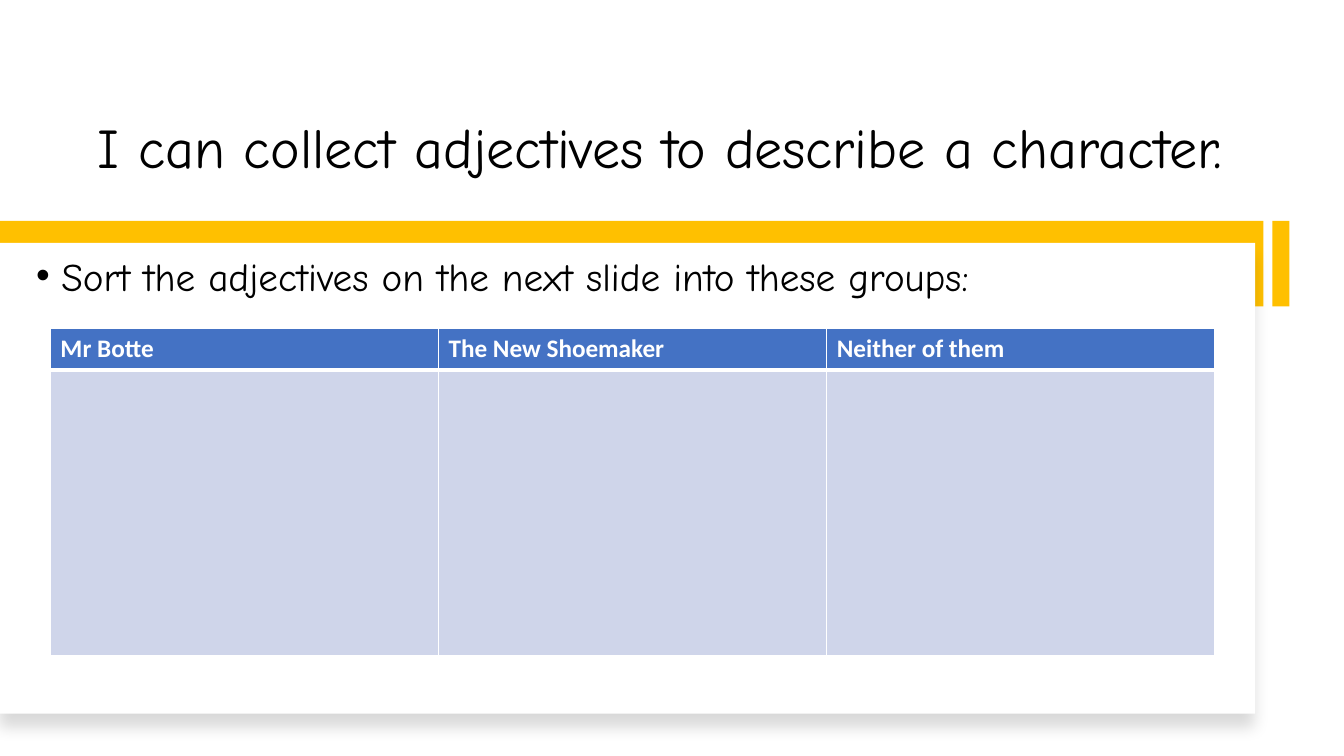
import pptx
import pptx.dml.color
import pptx.enum.shapes
import pptx.enum.text
import pptx.oxml
import pptx.oxml.ns
import pptx.util

PX = 9144  # EMU per px, 100 px to the inch
NAMESPACE = pptx.oxml.ns.nsdecls("a")
WHITE, BLACK, YELLOW = "FFFFFF", "000000", "FFC000"
HEADER_BLUE, BODY_BLUE = "4472C4", "CFD5EA"


def color(value):
    return pptx.dml.color.RGBColor.from_string(value)


def add_text(frame, text, size, font, value, spacing=None):
    paragraph = frame.paragraphs[0]
    paragraph.line_spacing = spacing
    run = paragraph.add_run()
    run.text = text
    run.font.size = pptx.util.Pt(size)
    run.font.name = font
    run.font.color.rgb = color(value)
    return run


presentation = pptx.Presentation()
presentation.slide_width = pptx.util.Inches(13.33)
presentation.slide_height = pptx.util.Inches(7.5)
slide = presentation.slides.add_slide(presentation.slide_layouts[6])

# Title
title = slide.shapes.add_textbox(87 * PX, 42 * PX, 1158 * PX, 142 * PX)
title.text_frame.word_wrap = True
title.text_frame.vertical_anchor = pptx.enum.text.MSO_ANCHOR.BOTTOM
add_text(title.text_frame, "I can collect adjectives to describe a character.",
         40, "Comic Neue", BLACK, 0.9)

# Yellow band, white card and yellow end bar
panels = [
    (0, 219, 1253, 85, YELLOW),
    (0, 241, 1245, 467, WHITE),
    (1262, 219, 17, 85, YELLOW),
]
for left, top, width, height, fill in panels:
    shape = slide.shapes.add_shape(pptx.enum.shapes.MSO_SHAPE.RECTANGLE,
                                   left * PX, top * PX, width * PX, height * PX)
    shape.shadow.inherit = False
    shape.fill.solid()
    shape.fill.fore_color.rgb = color(fill)
    shape.line.fill.background()
    if fill == WHITE:
        # Soft shadow below the card
        effects = shape._element.spPr.find(pptx.oxml.ns.qn("a:effectLst"))
        effects.append(pptx.oxml.parse_xml(
            f'<a:outerShdw {NAMESPACE} blurRad="{pptx.util.Pt(11)}" '
            f'dist="{pptx.util.Pt(10)}" dir="5400000" algn="t" rotWithShape="0">'
            f'<a:srgbClr val="{BLACK}"><a:alpha val="15000"/></a:srgbClr></a:outerShdw>'))

# Sorting table
headings = ["Mr Botte", "The New Shoemaker", "Neither of them"]
row_heights = [41, 283]
table = slide.shapes.add_table(2, 3, 50 * PX, 326 * PX,
                               1155 * PX, sum(row_heights) * PX).table
for row, height in zip(table.rows, row_heights):
    row.height = height * PX
for index, heading in enumerate(headings):
    table.columns[index].width = 385 * PX
    add_text(table.cell(0, index).text_frame, heading,
             18, "Calibri", WHITE).font.bold = True
    for row_index, fill in enumerate([HEADER_BLUE, BODY_BLUE]):
        cell = table.cell(row_index, index)
        cell.fill.solid()
        cell.fill.fore_color.rgb = color(fill)
        # White borders, thicker between the heading and the body
        widths = {"lnL": 1, "lnR": 1, "lnT": 3 if row_index else 1,
                  "lnB": 1 if row_index else 3}
        for position, (side, width) in enumerate(widths.items()):
            cell._tc.get_or_add_tcPr().insert(position, pptx.oxml.parse_xml(
                f'<a:{side} {NAMESPACE} w="{pptx.util.Pt(width)}"><a:solidFill>'
                f'<a:srgbClr val="{WHITE}"/></a:solidFill></a:{side}>'))

# Bulleted instruction
instruction = slide.shapes.add_textbox(26 * PX, 254 * PX, 1216 * PX, 50 * PX)
instruction.text_frame.word_wrap = True
properties = instruction.text_frame.paragraphs[0]._p.get_or_add_pPr()
properties.set("marL", str(25 * PX))
properties.set("indent", str(-25 * PX))
properties.append(pptx.oxml.parse_xml(f'<a:buFont {NAMESPACE} typeface="Arial"/>'))
properties.append(pptx.oxml.parse_xml(f'<a:buChar {NAMESPACE} char="•"/>'))
add_text(instruction.text_frame,
         "Sort the adjectives on the next slide into these groups:",
         28, "Comic Neue", BLACK, 0.8)

presentation.save("out.pptx")
